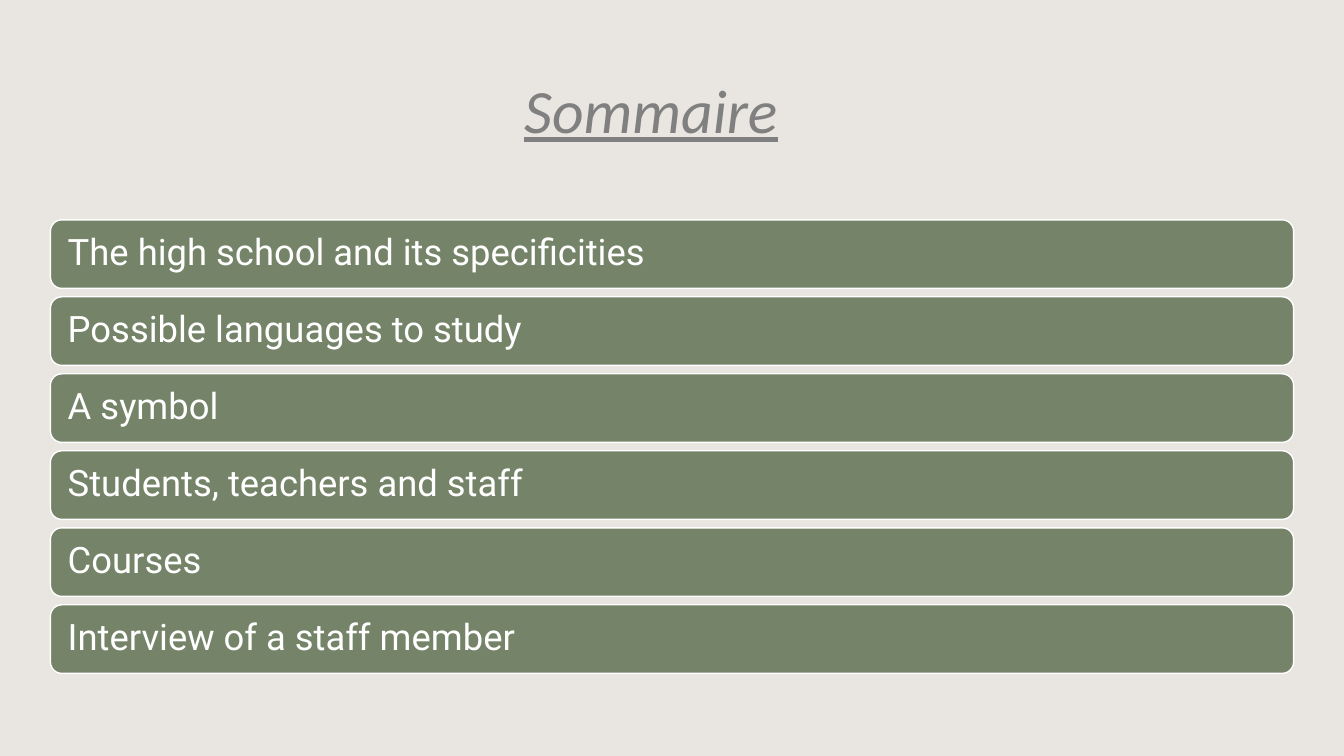
from pptx import Presentation
from pptx.dml.color import RGBColor
from pptx.enum.shapes import MSO_SHAPE as Shape
from pptx.enum.text import MSO_ANCHOR as Anchor, MSO_AUTO_SIZE as AutoSize, PP_ALIGN as Align
from pptx.util import Pt

SAND = RGBColor(0xE9, 0xE5, 0xE1)
GREY = RGBColor(0x80, 0x80, 0x80)
GREEN = RGBColor(0x75, 0x84, 0x68)
WHITE = RGBColor(0xFF, 0xFF, 0xFF)

TOPICS = [
    "The high school and its specificities",
    "Possible languages to study",
    "A symbol",
    "Students, teachers and staff",
    "Courses",
    "Interview of a staff member",
]
BAR_LEFT, BAR_TOP, BAR_WIDTH, BAR_HEIGHT = 36, 157, 888, 49
BAR_STEP = 55


def apply(target, values):
    for name, value in values.items():
        setattr(target, name, value)


class SummaryPage:
    title_font = {"name": "Calibri", "size": Pt(44), "italic": True, "underline": True, "bold": False}
    bar_font = {"name": "Roboto", "size": Pt(26)}
    bar_frame = {
        "word_wrap": True,
        "vertical_anchor": Anchor.MIDDLE,
        "margin_left": Pt(10),
        "margin_right": Pt(10),
        "margin_top": Pt(8),
        "margin_bottom": Pt(8),
    }

    def __init__(self, deck):
        self.page = deck.slides.add_slide(deck.slide_layouts[5])
        fill = self.page.background.fill
        fill.solid()
        fill.fore_color.rgb = SAND

    def set_text(self, frame, text, align, font, color):
        para = frame.paragraphs[0]
        para.alignment = align
        para.line_spacing = 0.9
        span = para.add_run()
        span.text = text
        apply(span.font, font)
        span.font.color.rgb = color

    def title(self, text, left, top, width, height):
        box = self.page.shapes.title
        apply(box, {"left": Pt(left), "top": Pt(top), "width": Pt(width), "height": Pt(height)})
        apply(box.text_frame, {"vertical_anchor": Anchor.MIDDLE, "auto_size": AutoSize.NONE})
        self.set_text(box.text_frame, text, Align.CENTER, self.title_font, GREY)

    def bar(self, text, left, top, width, height):
        box = self.page.shapes.add_shape(
            Shape.ROUNDED_RECTANGLE, Pt(left), Pt(top), Pt(width), Pt(height)
        )
        box.shadow.inherit = False
        box.fill.solid()
        box.fill.fore_color.rgb = GREEN
        box.line.color.rgb = WHITE
        box.line.width = Pt(1)
        apply(box.text_frame, self.bar_frame)
        self.set_text(box.text_frame, text, Align.LEFT, self.bar_font, WHITE)


def main():
    deck = Presentation()
    deck.slide_width, deck.slide_height = Pt(960), Pt(540)
    summary = SummaryPage(deck)

    # Heading
    summary.title("Sommaire", 36, 29, 858, 104)

    # One bar per topic
    for index, topic in enumerate(TOPICS):
        summary.bar(topic, BAR_LEFT, BAR_TOP + index * BAR_STEP, BAR_WIDTH, BAR_HEIGHT)

    deck.save("out.pptx")


if __name__ == "__main__":
    main()
